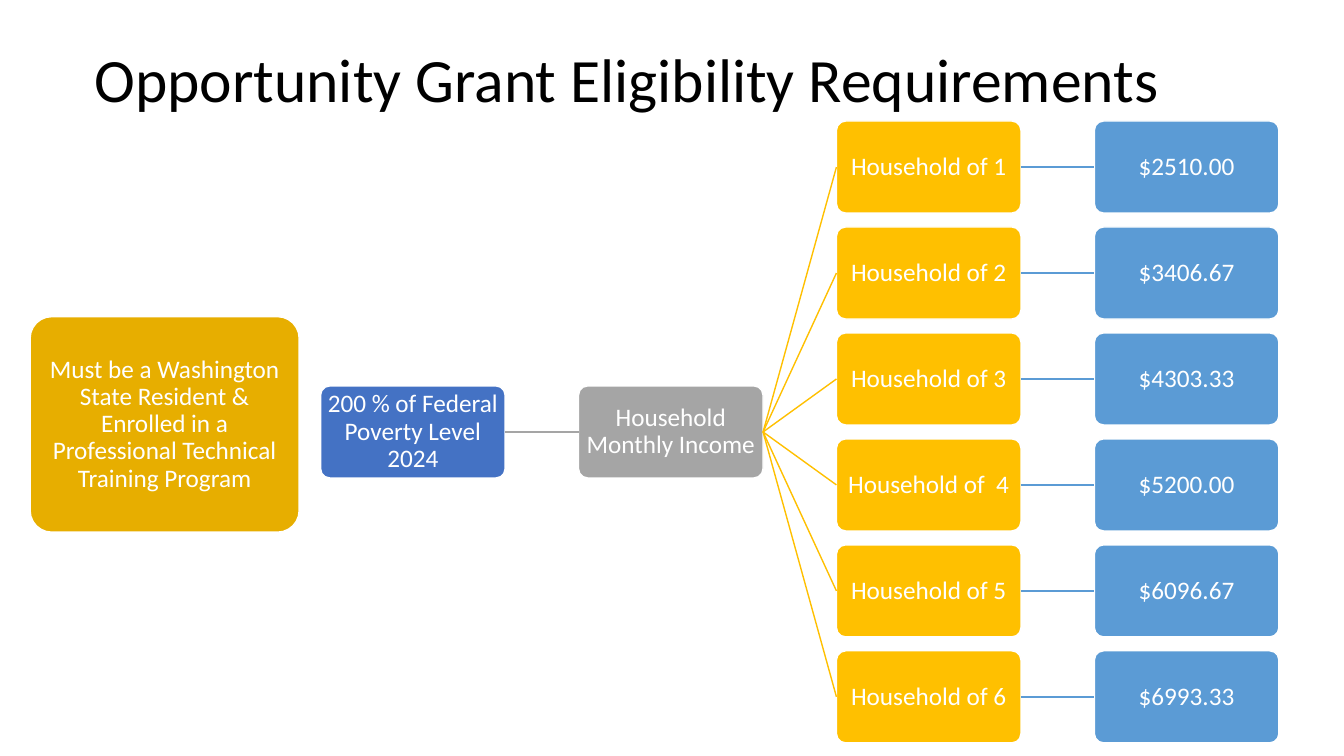
"""Build the Opportunity Grant eligibility slide."""
from lxml.etree import SubElement
from pptx import Presentation
from pptx.dml.color import RGBColor
from pptx.enum.shapes import MSO_CONNECTOR, MSO_SHAPE
from pptx.enum.text import MSO_ANCHOR, PP_ALIGN
from pptx.oxml.ns import qn
from pptx.util import Cm, Pt

TITLE = "Opportunity Grant Eligibility Requirements"
RULE = "Must be a Washington State Resident & Enrolled in a Professional Technical Training Program"
LEVEL = "200 % of Federal Poverty Level 2024"
INCOME = "Household Monthly Income"
LIMITS = [
    ("Household of 1", "$2510.00"),
    ("Household of 2", "$3406.67"),
    ("Household of 3", "$4303.33"),
    ("Household of  4", "$5200.00"),
    ("Household of 5", "$6096.67"),
    ("Household of 6", "$6993.33"),
]
HUES = {
    "black": "000000", "white": "FFFFFF", "ochre": "E7AE00", "navy": "4472C4",
    "gray": "A5A5A5", "gold": "FFC000", "blue": "5B9BD5",
}
WIDE, HIGH = 4.65, 2.32
LEFT, TOP = 8.08, 3.05
STEP, PITCH = 6.5, 2.67
MID = (len(LIMITS) - 1) / 2


def hue(name):
    return RGBColor.from_string(HUES[name])


def apply(item, values):
    for key, value in values.items():
        setattr(item, key, value)


def write(shape, text, size, color, align, pad):
    frame = shape.text_frame
    apply(frame, {
        "text": text, "word_wrap": True, "vertical_anchor": MSO_ANCHOR.MIDDLE,
        "margin_left": Cm(pad), "margin_right": Cm(pad),
        "margin_top": Cm(pad), "margin_bottom": Cm(pad),
    })
    para = frame.paragraphs[0]
    apply(para, {"alignment": align, "line_spacing": 0.9})
    font = para.runs[0].font
    apply(font, {"name": "Calibri", "size": Pt(size)})
    font.color.rgb = hue(color)


def card(slide, area, text, color, pad=0.1):
    shape = slide.shapes.add_shape(MSO_SHAPE.ROUNDED_RECTANGLE, *map(Cm, area))
    shape.shadow.inherit = False
    shape.adjustments[0] = 0.1
    shape.fill.solid()
    shape.fill.fore_color.rgb = hue(color)
    shape.line.color.rgb = hue("white")
    shape.line.width = Pt(1)
    write(shape, text, 18, "white", PP_ALIGN.CENTER, pad)
    return shape


def node(slide, col, row, text, color):
    area = (LEFT + col * STEP, TOP + row * PITCH, WIDE, HIGH)
    return card(slide, area, text, color)


def link(slide, start, end, color):
    line = slide.shapes.add_connector(MSO_CONNECTOR.STRAIGHT, 0, 0, 0, 0)
    line.begin_connect(start, 3)
    line.end_connect(end, 1)
    line.line.color.rgb = hue(color)
    line.line.width = Pt(1)
    SubElement(line._element.spPr, qn("a:effectLst"))


def main():
    deck = Presentation()
    apply(deck, {"slide_width": Cm(33.87), "slide_height": Cm(19.05)})
    slide = deck.slides.add_slide(deck.slide_layouts[6])
    title = slide.shapes.add_textbox(Cm(2.13), Cm(0.23), Cm(29.21), Cm(3.68))
    write(title, TITLE, 44, "black", PP_ALIGN.LEFT, 0.25)
    card(slide, (0.76, 7.98, 6.78, 5.43), RULE, "ochre", 0.26)
    level = node(slide, 0, MID, LEVEL, "navy")
    income = node(slide, 1, MID, INCOME, "gray")
    link(slide, level, income, "gray")
    for row, (house, limit) in enumerate(LIMITS):
        home = node(slide, 2, row, house, "gold")
        cap = node(slide, 3, row, limit, "blue")
        link(slide, income, home, "gold")
        link(slide, home, cap, "blue")
    deck.save("out.pptx")


if __name__ == "__main__":
    main()
